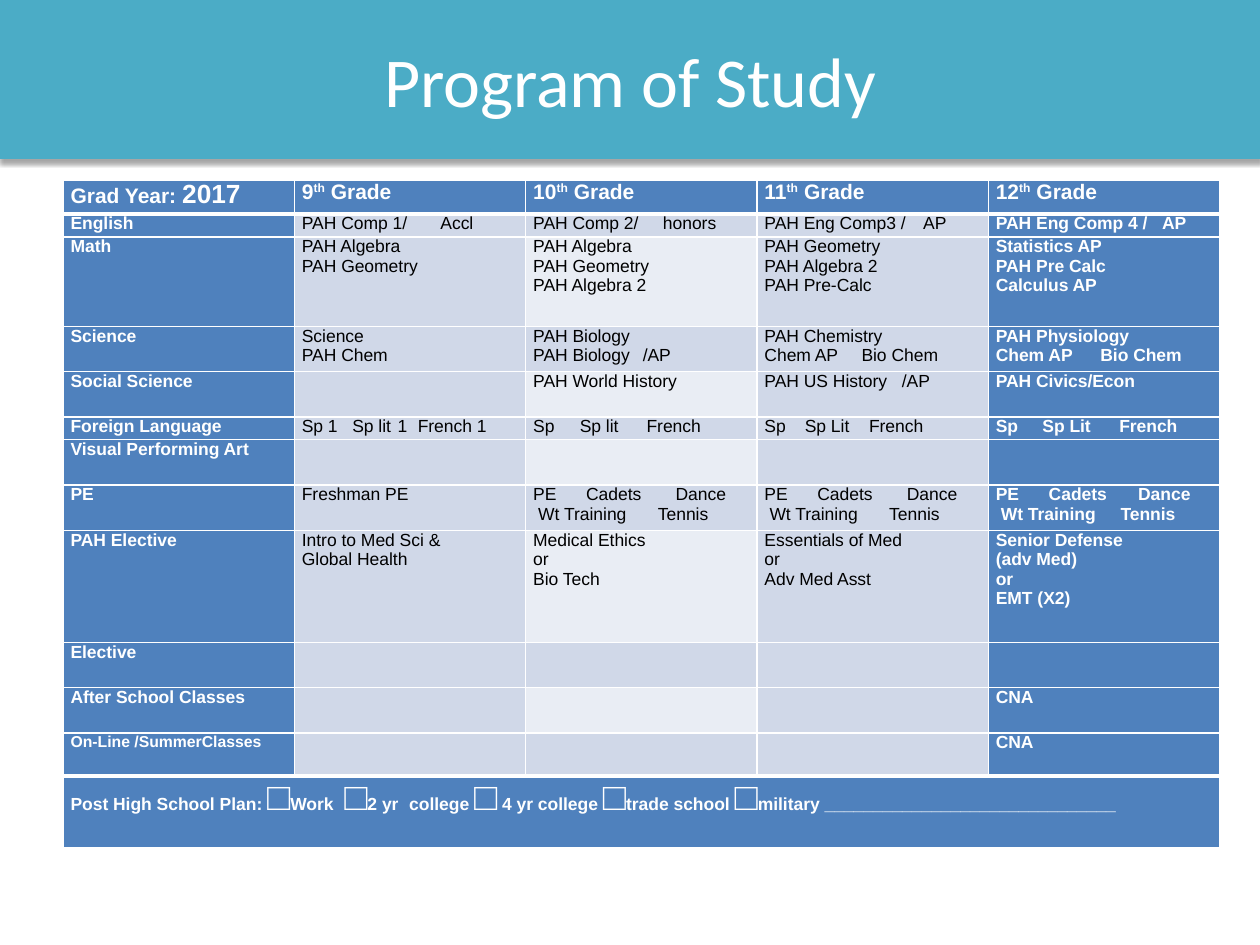
from lxml import etree
from pptx import Presentation
from pptx.dml.color import RGBColor
from pptx.enum import shapes, text
from pptx.oxml import ns
from pptx.util import Inches, Pt

TEAL = RGBColor(0x4B, 0xAC, 0xC6)
BLUE = RGBColor(0x4F, 0x81, 0xBD)
PALE = RGBColor(0xD0, 0xD8, 0xE8)
PALEST = RGBColor(0xE9, 0xED, 0xF4)
WHITE = RGBColor(0xFF, 0xFF, 0xFF)
BLACK = RGBColor(0x00, 0x00, 0x00)

ROW_HEIGHTS = [0.27, 0.18, 0.71, 0.36, 0.36, 0.18, 0.36, 0.36, 0.89, 0.36, 0.36, 0.34, 0.57]
COLUMN_COUNT = 5
LAST_ROW = len(ROW_HEIGHTS) - 1
GRADES = ["9", "10", "11", "12"]
SPORTS = [("PE", 0.42, "Cadets", 1.13, "Dance"), ("", 0.04, "Wt Training", 0.99, "Tennis")]

# A tuple alternates words with the tab stop, in inches, of the next word.
SUBJECTS = [
    [["English"], [("PAH Comp 1/", 1.1, "Accl")], [("PAH Comp 2/", 1.03, "honors")],
     [("PAH Eng Comp3 /", 1.26, "AP")], [("PAH Eng Comp 4 /", 1.32, "AP")]],
    [["Math"], ["PAH Algebra", "PAH Geometry"],
     ["PAH Algebra", "PAH Geometry", "PAH Algebra 2"],
     ["PAH Geometry", "PAH Algebra 2", "PAH Pre-Calc"],
     ["Statistics AP", "PAH Pre Calc", "Calculus AP"]],
    [["Science"], ["Science", "PAH Chem"],
     ["PAH Biology", ("PAH Biology", 0.87, "/AP")],
     ["PAH Chemistry", ("Chem AP", 0.77, "Bio Chem")],
     ["PAH Physiology", ("Chem AP", 0.83, "Bio Chem")]],
    [["Social Science"], [], ["PAH World History"],
     [("PAH US History", 1.09, "/AP")], ["PAH Civics/Econ"]],
    [["Foreign Language"], [("Sp 1", 0.4, "Sp lit", 0.76, "1", 0.92, "French 1")],
     [("Sp", 0.37, "Sp lit", 0.9, "French")], [("Sp", 0.32, "Sp Lit", 0.83, "French")],
     [("Sp", 0.37, "Sp Lit", 0.98, "French")]],
    [["Visual Performing Art"], [], [], [], []],
    [["PE"], ["Freshman PE"], SPORTS, SPORTS, SPORTS],
    [["PAH Elective"], ["Intro to Med Sci &", "Global Health"],
     ["Medical Ethics", "or", "Bio Tech"], ["Essentials of Med", "or", "Adv Med Asst"],
     ["Senior Defense", "(adv Med)", "or", "EMT (X2)"]],
    [["Elective"], [], [], [], []],
    [["After School Classes"], [], [], [], ["CNA"]],
    [["On-Line /SummerClasses"], [], [], [], ["CNA"]],
]
PLANS = [
    ("Post High School Plan: ", 10), ("□", 22), ("Work", 10), (" ", 22), ("□", 22),
    ("2 yr", 10), (" ", 22), ("college ", 10), ("□", 22), (" 4 yr college ", 10),
    ("□", 22), ("trade school ", 10), ("□", 22),
    ("military ______________________________", 10),
]


def add_run(paragraph, words, size, color=WHITE, bold=True, font="Arial"):
    run = paragraph.add_run()
    run.text = words
    run.font.name = font
    run.font.size = Pt(size)
    run.font.bold = bold
    run.font.color.rgb = color
    return run


def add_title_band(slide, left, top, width, height):
    band = slide.shapes.add_shape(shapes.MSO_SHAPE.RECTANGLE, left, top, width, height)
    band.fill.solid()
    band.fill.fore_color.rgb = TEAL
    band.line.color.rgb = TEAL
    band.line.width = Pt(0.75)
    band.shadow.inherit = False
    effects = band._element.spPr.find(ns.qn("a:effectLst"))
    shadow = etree.SubElement(effects, ns.qn("a:outerShdw"), blurRad=str(Pt(3.1)),
                              dist=str(Pt(1.8)), dir="5400000", rotWithShape="0")
    shade = etree.SubElement(shadow, ns.qn("a:srgbClr"), val=str(BLACK))
    etree.SubElement(shade, ns.qn("a:alpha"), val="35000")

    title = slide.shapes.title
    title._element.addprevious(band._element)
    title.left, title.top = left + Inches(0.5), top + Inches(0.01)
    title.width, title.height = width - Inches(1), height - Inches(0.01)
    title.text_frame.vertical_anchor = text.MSO_ANCHOR.MIDDLE
    paragraph = title.text_frame.paragraphs[0]
    paragraph.alignment = text.PP_ALIGN.CENTER
    add_run(paragraph, "Program of Study", 40, bold=False, font="Calibri")


def set_borders(cell, top, bottom):
    properties = cell._tc.get_or_add_tcPr()
    widths = {"lnL": 1, "lnR": 1, "lnT": top, "lnB": bottom}
    for index, (side, width) in enumerate(widths.items()):
        border = etree.Element(ns.qn("a:" + side), w=str(Pt(width)))
        fill = etree.SubElement(border, ns.qn("a:solidFill"))
        etree.SubElement(fill, ns.qn("a:srgbClr"), val=str(WHITE))
        properties.insert(index, border)


def format_cell(cell, row, column):
    cell.margin_left = cell.margin_right = Inches(0.06)
    cell.margin_top = cell.margin_bottom = 0
    cell.fill.solid()
    if row in (0, LAST_ROW) or column in (0, COLUMN_COUNT - 1):
        cell.fill.fore_color.rgb = BLUE
    else:
        cell.fill.fore_color.rgb = PALEST if column == 2 and row % 2 == 0 else PALE
    set_borders(cell, top=3 if row in (1, LAST_ROW) else 1,
                bottom=3 if row in (0, LAST_ROW - 1) else 1)


def write_lines(cell, lines, size, color, bold):
    for index, line in enumerate(lines):
        frame = cell.text_frame
        paragraph = frame.add_paragraph() if index else frame.paragraphs[0]
        parts = (line,) if isinstance(line, str) else line
        if parts[1::2]:
            tabs = etree.SubElement(paragraph._p.get_or_add_pPr(), ns.qn("a:tabLst"))
            for stop in parts[1::2]:
                etree.SubElement(tabs, ns.qn("a:tab"), pos=str(Inches(stop)), algn="l")
        add_run(paragraph, "\t".join(parts[::2]), size, color, bold)


def write_header(table):
    paragraph = table.cell(0, 0).text_frame.paragraphs[0]
    add_run(paragraph, "Grad Year: ", 12)
    add_run(paragraph, "2017", 15)
    for column, grade in enumerate(GRADES, 1):
        paragraph = table.cell(0, column).text_frame.paragraphs[0]
        add_run(paragraph, grade, 12)
        ordinal = add_run(paragraph, "th", 12)
        ordinal._r.get_or_add_rPr().set("baseline", "30000")
        add_run(paragraph, " Grade", 12)


def add_study_table(slide, left, top, width, height):
    frame = slide.shapes.add_table(len(ROW_HEIGHTS), COLUMN_COUNT, left, top, width, height)
    table = frame.table
    for column in table.columns:
        column.width = int(width / COLUMN_COUNT)
    for row, row_height in enumerate(ROW_HEIGHTS):
        table.rows[row].height = Inches(row_height)
        for column in range(COLUMN_COUNT):
            format_cell(table.cell(row, column), row, column)

    write_header(table)
    for row, subject in enumerate(SUBJECTS, 1):
        for column, lines in enumerate(subject):
            outer = column in (0, COLUMN_COUNT - 1)
            size = 9 if column == 0 and row == LAST_ROW - 1 else 10
            write_lines(table.cell(row, column), lines, size, WHITE if outer else BLACK, outer)

    plan_cell = table.cell(LAST_ROW, 0)
    plan_cell.merge(table.cell(LAST_ROW, COLUMN_COUNT - 1))
    for words, size in PLANS:
        add_run(plan_cell.text_frame.paragraphs[0], words, size)


def main():
    presentation = Presentation()
    presentation.slide_width = Inches(10)
    presentation.slide_height = Inches(7.5)
    slide = presentation.slides.add_slide(presentation.slide_layouts[5])
    add_title_band(slide, 0, 0, Inches(10), Inches(1.26))
    add_study_table(slide, Inches(0.5), Inches(1.43), Inches(9.18), Inches(sum(ROW_HEIGHTS)))
    presentation.save("out.pptx")


if __name__ == "__main__":
    main()
